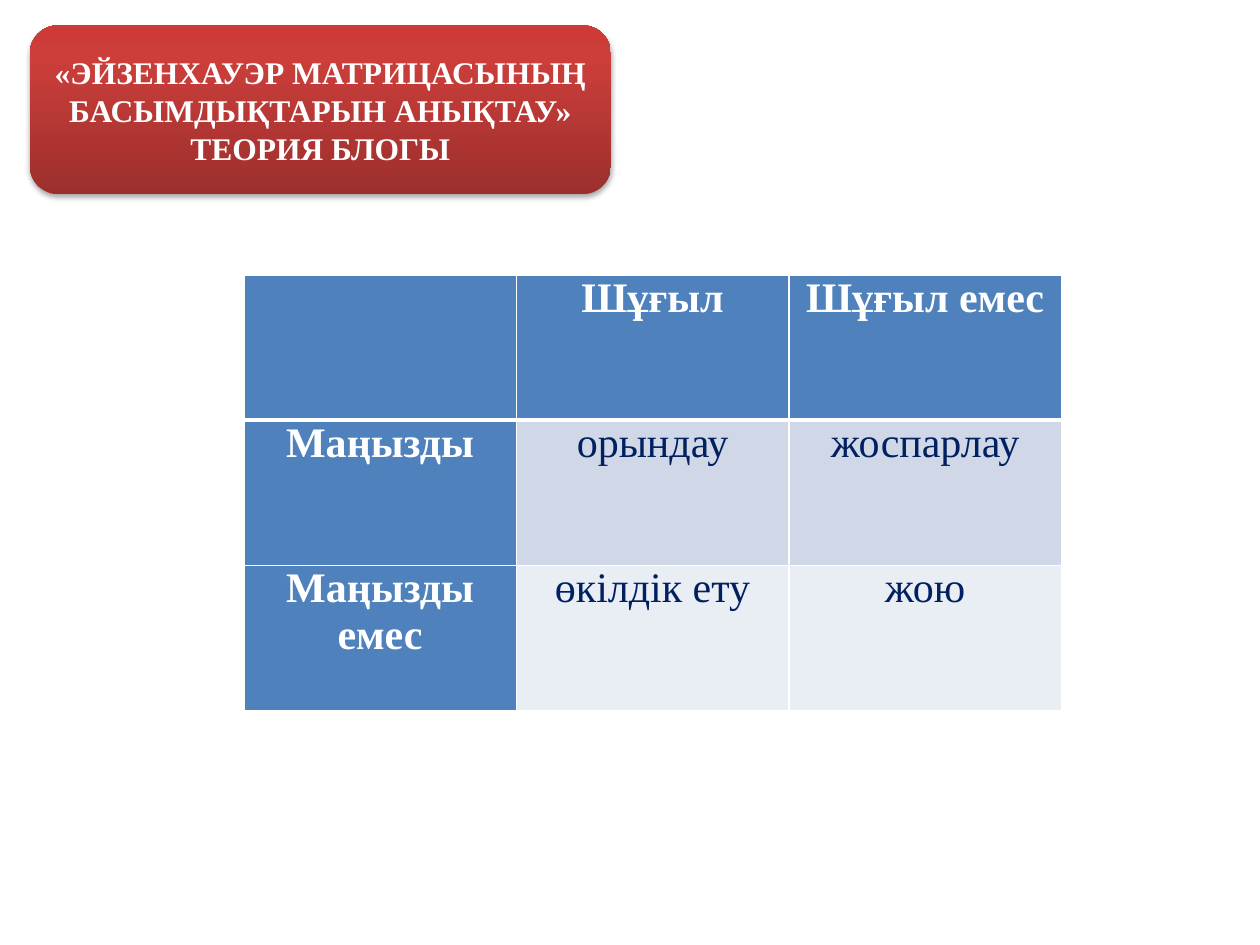
from dataclasses import dataclass

import pptx
import pptx.dml.color
import pptx.enum.shapes
import pptx.enum.text
import pptx.oxml
import pptx.oxml.ns
import pptx.util

Pt = pptx.util.Pt
FONT = "Times New Roman"
COLORS = {
    "white": "FFFFFF",
    "navy": "002060",
    "header": "4F81BD",
    "band_dark": "D0D8E8",
    "band_light": "E9EDF4",
    "red_dark": "9C2F2D",
    "red_mid": "CB3E3A",
    "red_light": "CE3B37",
    "shadow": "000000",
}


@dataclass
class Box:
    left: float
    top: float
    width: float
    height: float

    def points(self) -> tuple:
        return Pt(self.left), Pt(self.top), Pt(self.width), Pt(self.height)


@dataclass
class MatrixRow:
    texts: tuple
    band: str
    bold: bool = False


TITLE = "«ЭЙЗЕНХАУЭР МАТРИЦАСЫНЫҢ БАСЫМДЫҚТАРЫН АНЫҚТАУ» ТЕОРИЯ БЛОГЫ"
BANNER = Box(17.1, 14.5, 332, 96.5)
MATRIX = Box(139.3, 157, 467.25, 249)
ROWS = [
    MatrixRow(("", "Шұғыл", "Шұғыл емес"), "header", True),
    MatrixRow(("Маңызды", "орындау", "жоспарлау"), "band_dark"),
    MatrixRow(("Маңызды емес", "өкілдік ету", "жою"), "band_light"),
]


def parse_a(xml: str):
    """Turn one drawing element, written with the a: prefix, into XML."""
    head, rest = xml.split(">", 1)
    return pptx.oxml.parse_xml(f'{head} {pptx.oxml.ns.nsdecls("a")}>{rest}')


def write(tf, text: str, *, size: float, color: str, bold: bool = False) -> None:
    p = tf.paragraphs[0]
    p.alignment = pptx.enum.text.PP_ALIGN.CENTER
    r = p.add_run()
    r.text = text
    r.font.name, r.font.size, r.font.bold = FONT, Pt(size), bold
    r.font.color.rgb = pptx.dml.color.RGBColor.from_string(COLORS[color])


def draw_banner(s, box: Box):
    """Rounded banner with a three-stop gradient and a soft shadow below."""
    sp = s.shapes.add_shape(
        pptx.enum.shapes.MSO_SHAPE.ROUNDED_RECTANGLE, *box.points())
    sp.line.fill.background()
    stops = "".join(
        f'<a:gs pos="{pos * 1000}"><a:srgbClr val="{COLORS[name]}"/></a:gs>'
        for pos, name in ((0, "red_dark"), (80, "red_mid"), (100, "red_light")))
    sp._element.spPr.find(pptx.oxml.ns.qn("a:ln")).addprevious(parse_a(
        f'<a:gradFill rotWithShape="1"><a:gsLst>{stops}</a:gsLst>'
        '<a:lin ang="16200000" scaled="0"/></a:gradFill>'))
    sp._element.spPr.append(parse_a(
        f'<a:effectLst><a:outerShdw blurRad="{Pt(3.1)}" dist="{Pt(1.8)}" '
        f'dir="5400000" rotWithShape="0"><a:srgbClr val="{COLORS["shadow"]}">'
        '<a:alpha val="35000"/></a:srgbClr></a:outerShdw></a:effectLst>'))
    return sp


def draw_title(s, text: str, box: Box) -> None:
    sp = s.shapes.title
    sp.left, sp.top, sp.width, sp.height = box.points()
    tf = sp.text_frame
    tf.word_wrap = True
    tf.auto_size = pptx.enum.text.MSO_AUTO_SIZE.NONE
    tf.vertical_anchor = pptx.enum.text.MSO_ANCHOR.MIDDLE
    write(tf, text, size=18, color="white", bold=True)


def set_borders(cell, top: float, bottom: float) -> None:
    tc_pr = cell._tc.get_or_add_tcPr()
    for side, width in (("L", 1), ("R", 1), ("T", top), ("B", bottom)):
        tc_pr.append(parse_a(
            f'<a:ln{side} w="{Pt(width)}"><a:solidFill>'
            f'<a:srgbClr val="{COLORS["white"]}"/></a:solidFill></a:ln{side}>'))


def draw_matrix(s, rows: list[MatrixRow], box: Box) -> None:
    n_cols = len(rows[0].texts)
    table = s.shapes.add_table(len(rows), n_cols, *box.points()).table
    for col in table.columns:
        col.width = Pt(box.width / n_cols)
    for i, row in enumerate(rows):
        table.rows[i].height = Pt(box.height / len(rows))
        for j, text in enumerate(row.texts):
            cell = table.cell(i, j)
            set_borders(cell, top=3 if i == 1 else 1, bottom=3 if i == 0 else 1)
            heading = row.bold or j == 0
            fill = "header" if heading else row.band
            cell.fill.solid()
            cell.fill.fore_color.rgb = pptx.dml.color.RGBColor.from_string(COLORS[fill])
            cell.margin_left = cell.margin_right = Pt(5)
            cell.margin_top = cell.margin_bottom = Pt(0)
            if text:
                write(cell.text_frame, text, size=24, bold=heading,
                      color="white" if heading else "navy")


def main() -> None:
    prs = pptx.Presentation()
    prs.slide_width, prs.slide_height = Pt(720), Pt(540)
    s = prs.slides.add_slide(prs.slide_layouts.get_by_name("Title Only"))
    banner = draw_banner(s, BANNER)
    s.shapes.title._element.addprevious(banner._element)
    draw_title(s, TITLE, BANNER)
    draw_matrix(s, ROWS, MATRIX)
    prs.save("out.pptx")


if __name__ == "__main__":
    main()
